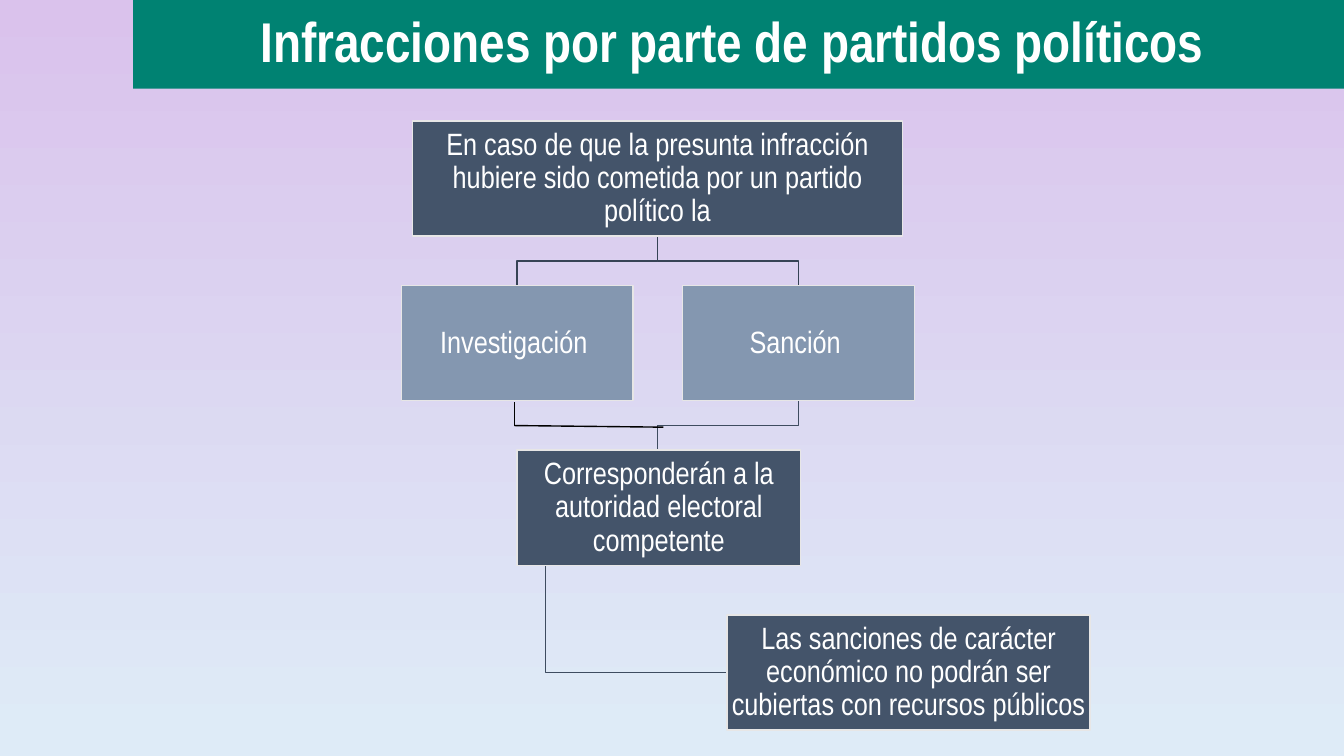
from pptx import Presentation
from pptx.dml.color import RGBColor
from pptx.enum.shapes import MSO_CONNECTOR as Connector, MSO_SHAPE as Shape
from pptx.enum.text import MSO_ANCHOR as Anchor, MSO_AUTO_SIZE as AutoSize, PP_ALIGN as Align
from pptx.oxml.ns import qn
from pptx.util import Inches, Pt
from lxml.etree import SubElement

GREEN = RGBColor(0x00, 0x82, 0x72)
NAVY = RGBColor(0x44, 0x54, 0x6A)
STEEL = RGBColor(0x84, 0x97, 0xB0)
PALE = RGBColor(0xE7, 0xE6, 0xE6)
UPPER_LINK = RGBColor(0x36, 0x43, 0x55)
LOWER_LINK = RGBColor(0x3E, 0x4C, 0x60)
LILAC = RGBColor(0xDA, 0xC2, 0xEC)
SKY = RGBColor(0xDE, 0xEB, 0xF7)
WHITE = RGBColor(0xFF, 0xFF, 0xFF)
BLACK = RGBColor(0x00, 0x00, 0x00)

WIDTH, HEIGHT = Inches(13.33), Inches(7.5)
COLUMN = WIDTH / 100
FIRST_ROW, ROW = Inches(1.2), Inches(4.9) / 3
BOX_ROWS = 0.7
LEFT, CENTER, RIGHT = 38.48, 48.91, 59.41


class Chart:
    """Hierarchy page on 100 columns and four rows, with its style."""

    font = "Arial Narrow"
    line_width = Pt(1)

    def __init__(self, deck):
        self.page = deck.slides.add_slide(deck.slide_layouts[5])
        self.shapes = self.page.shapes

    def place(self, column, row):
        return round(column * COLUMN), round(FIRST_ROW + row * ROW)

    def background(self, top, bottom):
        fill = self.page.background.fill
        fill.gradient()
        fill.gradient_angle = 270
        for stop, color, position in zip(fill.gradient_stops, (top, bottom), (0, 0.98)):
            stop.color.rgb, stop.position = color, position

    def label(self, shape, text, size, bold=False):
        frame = shape.text_frame
        frame.text = text
        frame.word_wrap = True
        frame.auto_size = AutoSize.NONE
        frame.vertical_anchor = Anchor.MIDDLE
        para = frame.paragraphs[0]
        para.alignment, para.line_spacing = Align.CENTER, 0.9
        font = para.runs[0].font
        font.name, font.size, font.bold = self.font, Pt(size), bold
        font.color.rgb = WHITE

    def title(self, text):
        title = self.shapes.title
        title.left, title.top = round(0.099 * WIDTH), 0
        title.width, title.height = WIDTH - title.left, Inches(0.88)
        title.fill.solid()
        title.fill.fore_color.rgb = GREEN
        self.label(title, text, 40, True)

    def box(self, text, column, row, columns, color):
        left, top = self.place(column, row)
        box = self.shapes.add_shape(
            Shape.RECTANGLE, left, top, round(columns * COLUMN), round(BOX_ROWS * ROW))
        box.shadow.inherit = False
        box.fill.solid()
        box.fill.fore_color.rgb = color
        box.line.color.rgb, box.line.width = PALE, self.line_width
        frame = box.text_frame
        frame.margin_left = frame.margin_right = Inches(0.02)
        frame.margin_top = frame.margin_bottom = Inches(0.02)
        self.label(box, text, 22)

    def bend(self, color, *corners):
        start, *others = [self.place(*corner) for corner in corners]
        builder = self.shapes.build_freeform(*start)
        builder.add_line_segments(others, close=False)
        bend = builder.convert_to_shape()
        bend.shadow.inherit = False
        bend.fill.background()
        bend.line.color.rgb, bend.line.width = color, self.line_width

    def straight(self, start, end):
        line = self.shapes.add_connector(
            Connector.STRAIGHT, *self.place(*start), *self.place(*end))
        line.line.color.rgb, line.line.width = BLACK, self.line_width
        SubElement(line._element.spPr, qn("a:effectLst"))


def main():
    deck = Presentation()
    deck.slide_width, deck.slide_height = WIDTH, HEIGHT
    chart = Chart(deck)
    chart.background(LILAC, SKY)
    chart.title("Infracciones por parte de partidos políticos ")

    chart.bend(LOWER_LINK, (40.59, 2.7), (40.59, 3.35), (54.09, 3.35))
    chart.bend(LOWER_LINK, (RIGHT, 1.7), (RIGHT, 1.85), (CENTER, 1.85), (CENTER, 2))
    for child in (RIGHT, LEFT):
        chart.bend(UPPER_LINK, (CENTER, 0.7), (CENTER, 0.85), (child, 0.85), (child, 1))

    for text, column, row, columns, color in (
        ("En caso de que la presunta infracción hubiere sido cometida por un partido político la",
         30.68, 0, 36.46, NAVY),
        ("Investigación ", 29.86, 1, 17.25, STEEL),
        ("Sanción ", 50.79, 1, 17.25, STEEL),
        ("Corresponderán a la autoridad electoral competente", 38.48, 2, 21.08, NAVY),
        ("Las sanciones de carácter económico no podrán ser cubiertas con recursos públicos",
         54.09, 3, 27.01, NAVY),
    ):
        chart.box(text, column, row, columns, color)

    chart.straight((38.26, 1.71), (38.26, 1.85))
    chart.straight((38.26, 1.85), (49.36, 1.86))
    deck.save("out.pptx")


if __name__ == "__main__":
    main()
